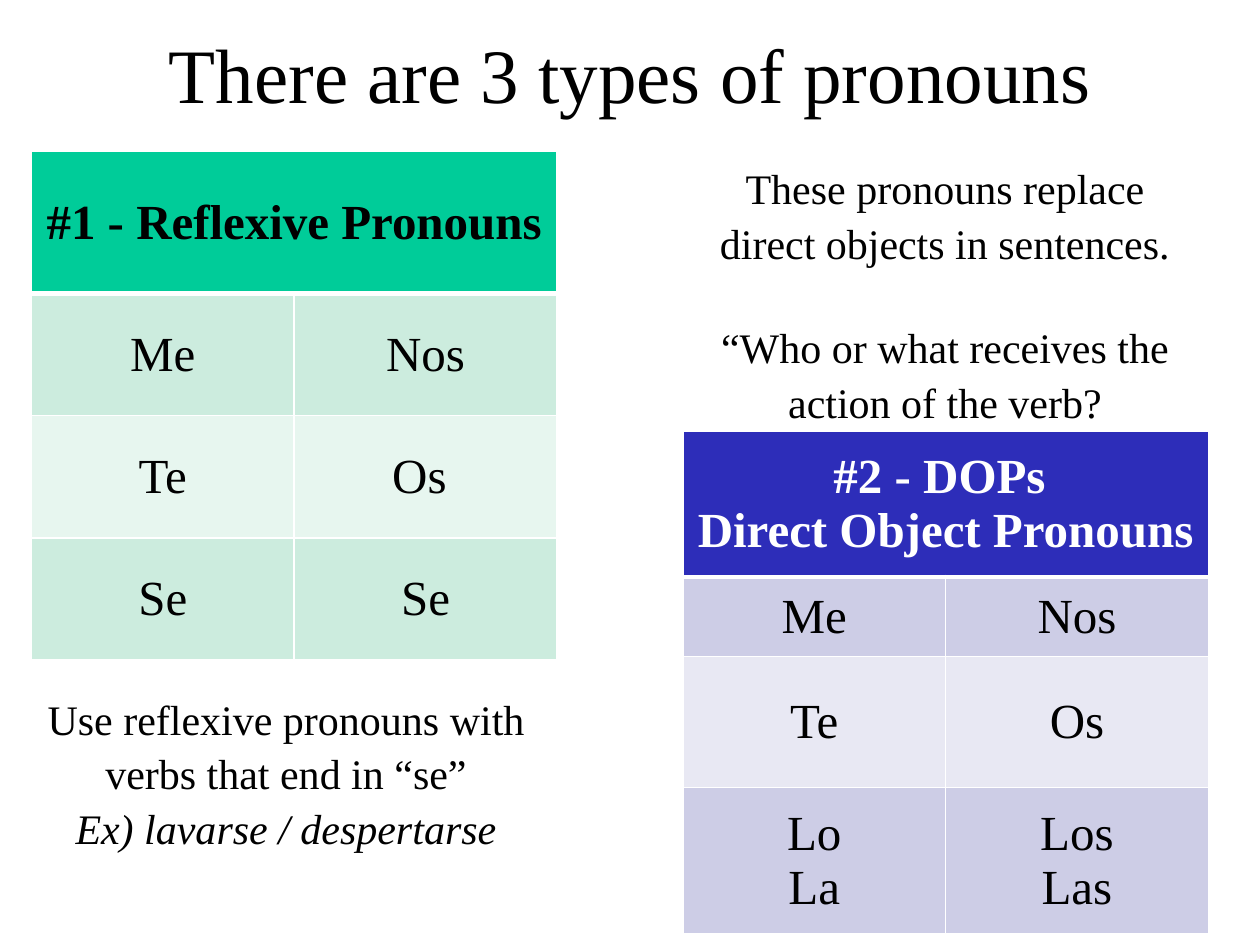
from lxml import etree
from pptx import Presentation
from pptx.dml.color import RGBColor
from pptx.enum.text import MSO_ANCHOR, PP_ALIGN
from pptx.oxml.ns import qn
from pptx.util import Inches, Pt

CENTER = PP_ALIGN.CENTER
MIDDLE = MSO_ANCHOR.MIDDLE
FONT = "Times New Roman"
COLORS = {
    "black": "000000", "white": "FFFFFF",
    "green": "00CC99", "green band": "CCECDE", "green light": "E7F6EF",
    "blue": "2D2DB9", "blue band": "CDCDE6", "blue light": "E8E8F3",
}


def write_lines(text_frame, lines, size, color="black", bold=False):
    """Write each line as a centred paragraph."""
    text_frame.text = "\n".join(lines)
    text_frame.word_wrap = True
    for paragraph in text_frame.paragraphs:
        paragraph.alignment = CENTER
        paragraph.font.name = FONT
        paragraph.font.size = Pt(size)
        paragraph.font.bold = bold
        paragraph.font.color.rgb = RGBColor.from_string(COLORS[color])


def add_borders(cell, bottom_width):
    """Draw white cell borders, 1 pt except for the bottom one."""
    properties = cell._tc.get_or_add_tcPr()
    widths = {"a:lnL": 1, "a:lnR": 1, "a:lnT": 1, "a:lnB": bottom_width}
    for index, (tag, width) in enumerate(widths.items()):
        line = etree.Element(qn(tag), w=str(Pt(width)))
        fill = etree.SubElement(line, qn("a:solidFill"))
        etree.SubElement(fill, qn("a:srgbClr"), val=COLORS["white"])
        properties.insert(index, line)


presentation = Presentation()
presentation.slide_width = Inches(10)
presentation.slide_height = Inches(7.5)
slide = presentation.slides.add_slide(presentation.slide_layouts[6])

title = slide.shapes.add_textbox(Inches(0.75), Inches(-0.05), Inches(8.5), Inches(1.25))
title.text_frame.vertical_anchor = MIDDLE
write_lines(title.text_frame, ["There are 3 types of pronouns"], 44)

# left, top, row heights, hue, heading colour, heading, body rows
pronoun_tables = [
    (0.25, 1.2, [1.13, 0.97, 0.97, 0.97], "green", "black",
     "#1 - Reflexive Pronouns",
     [("Me", "Nos"), ("Te", "Os "), ("Se", "Se")]),
    (5.42, 3.42, [1.16, 0.63, 1.04, 1.16], "blue", "white",
     "#2 - DOPs \nDirect Object Pronouns",
     [("Me", "Nos"), ("Te", "Os"), ("Lo\nLa", "Los\nLas")]),
]
for left, top, heights, hue, heading_color, heading, body in pronoun_tables:
    table = slide.shapes.add_table(
        4, 2, Inches(left), Inches(top), Inches(4.17), Inches(sum(heights))).table
    table.cell(0, 0).merge(table.cell(0, 1))
    for row_index, texts in enumerate([(heading, ""), *body]):
        table.rows[row_index].height = Inches(heights[row_index])
        is_heading = row_index == 0
        shade = hue if is_heading else f"{hue} {'band' if row_index % 2 else 'light'}"
        for column_index, text in enumerate(texts):
            cell = table.cell(row_index, column_index)
            cell.vertical_anchor = MIDDLE
            cell.fill.solid()
            cell.fill.fore_color.rgb = RGBColor.from_string(COLORS[shade])
            add_borders(cell, 3 if is_heading else 1)
            write_lines(cell.text_frame, text.split("\n"), 28,
                        heading_color if is_heading else "black", is_heading)

# left, top, height, lines, second line in italics, gap before second line
explanations = [
    (0.23, 5.42, 1.31,
     ["Use reflexive pronouns with verbs that end in “se”",
      "Ex) lavarse / despertarse"], True, 0),
    (5.46, 1.21, 2.12,
     ["These pronouns replace direct objects in sentences.",
      "“Who or what receives the action of the verb?"], False, 28.8),
]
for left, top, height, lines, italic, gap in explanations:
    explanation = slide.shapes.add_textbox(
        Inches(left), Inches(top), Inches(4.08), Inches(height))
    write_lines(explanation.text_frame, lines, 24)
    for paragraph in explanation.text_frame.paragraphs:
        paragraph.line_spacing = 1.08
    second = explanation.text_frame.paragraphs[1]
    second.font.italic = italic
    second.space_before = Pt(gap)

presentation.save("out.pptx")
